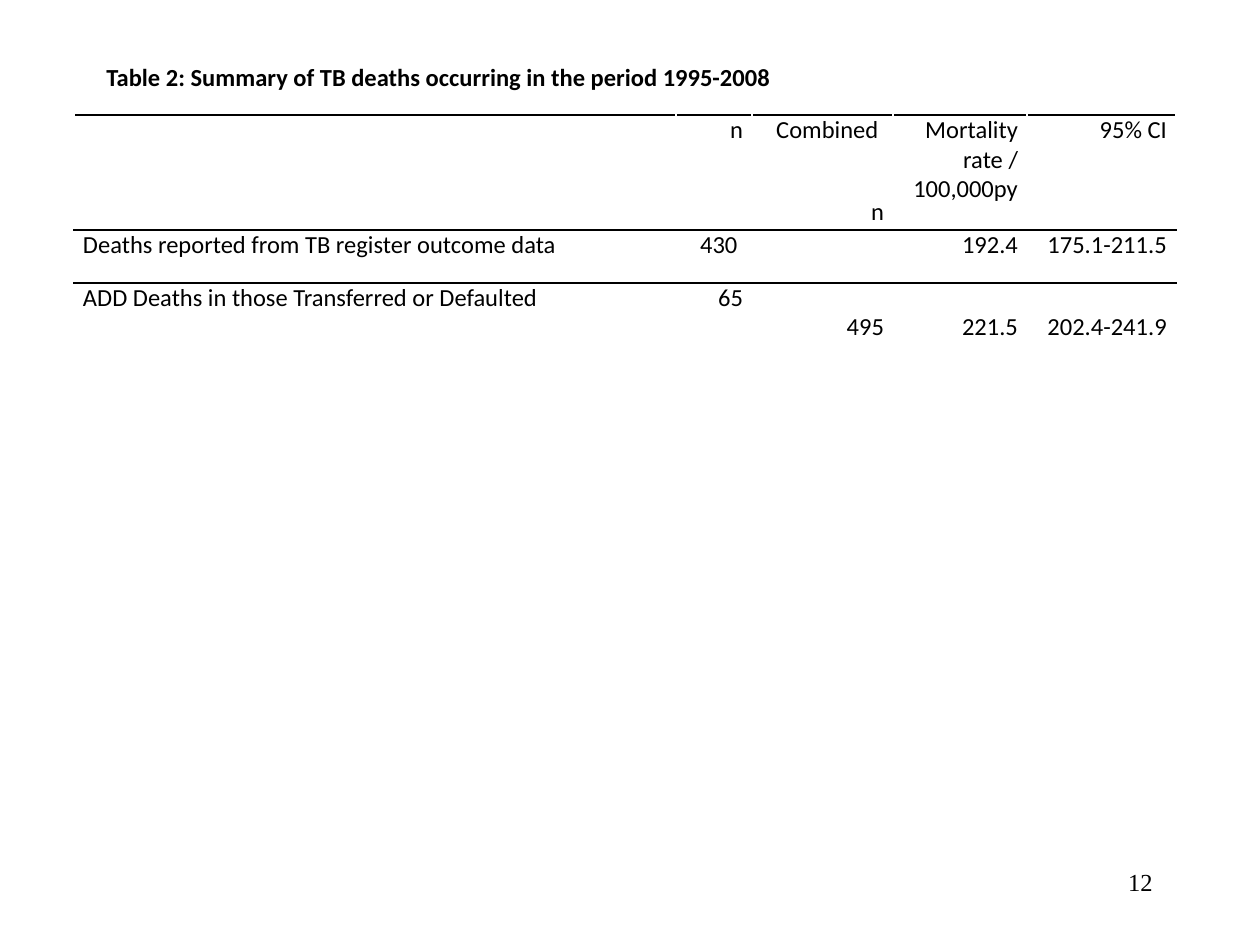
from lxml import etree
from pptx import Presentation
from pptx.dml.color import RGBColor
from pptx.enum.text import PP_ALIGN
from pptx.oxml.ns import qn
from pptx.util import Emu, Pt

LEFT, RIGHT, JUSTIFY = PP_ALIGN.LEFT, PP_ALIGN.RIGHT, PP_ALIGN.JUSTIFY
PX = 914400 / 126
BLACK = "000000"
TEXT_SIZE = 14
RULE_WIDTH = 1.5

TITLE = "Table 2: Summary of TB deaths occurring in the period 1995-2008"
PAGE_NUMBER = "12"
ROWS = [
    ["", "n", "Combined \nn", "Mortality rate / 100,000py", "95% CI"],
    ["Deaths reported from TB register outcome data", "430 ", "", "192.4", "175.1-211.5"],
    ["ADD Deaths in those Transferred or Defaulted", "65", "", "", ""],
    ["", "", "495", "221.5", "202.4-241.9"],
]
COLUMN_WIDTHS = [602, 76, 141, 134, 149]
ROW_HEIGHTS = [115, 53, 27, 27]
RULED_EDGES = {0: ["lnT", "lnB"], 1: ["lnT"]}  # row: edges with a line


def px(length):
    return Emu(round(length * PX))


def color(hex_text):
    return RGBColor.from_string(hex_text)


def write(frame, text, font="Calibri", bold=False, align=LEFT, before=0, after=0):
    frame.word_wrap = True
    for index, line in enumerate(text.split("\n")):
        paragraph = frame.add_paragraph() if index else frame.paragraphs[0]
        paragraph.alignment = align
        paragraph.space_before, paragraph.space_after = Pt(before), Pt(after)
        if not line:
            # An empty cell would otherwise stretch its row at the default size.
            etree.SubElement(paragraph._p, qn("a:endParaRPr"), sz=str(TEXT_SIZE * 100))
            continue
        run = paragraph.add_run()
        run.text = line
        run.font.name, run.font.size, run.font.bold = font, Pt(TEXT_SIZE), bold
        run.font.color.rgb = color(BLACK)


def add_text(slide, box, text, **style):
    write(slide.shapes.add_textbox(*map(px, box)).text_frame, text, **style)


def rule_edge(cell, edge):
    line = etree.SubElement(cell._tc.get_or_add_tcPr(), qn(f"a:{edge}"),
                            w=str(Pt(RULE_WIDTH)))
    fill = etree.SubElement(line, qn("a:solidFill"))
    etree.SubElement(fill, qn("a:srgbClr"), val=BLACK)


def add_deaths_table(slide, left, top):
    table = slide.shapes.add_table(
        len(ROWS), len(COLUMN_WIDTHS), px(left), px(top),
        px(sum(COLUMN_WIDTHS)), px(sum(ROW_HEIGHTS))).table
    table.first_row = table.horz_banding = False
    for column, width in zip(table.columns, COLUMN_WIDTHS):
        column.width = px(width)
    for r, texts in enumerate(ROWS):
        table.rows[r].height = px(ROW_HEIGHTS[r])
        for c, text in enumerate(texts):
            cell = table.cell(r, c)
            cell.margin_left = cell.margin_right = px(9)
            cell.margin_top = cell.margin_bottom = 0
            write(cell.text_frame, text, align=RIGHT if c else JUSTIFY,
                  before=24, after=6)
            for edge in RULED_EDGES.get(r, []):
                rule_edge(cell, edge)
            cell.fill.background()


def main():
    deck = Presentation()
    deck.slide_width, deck.slide_height = px(1260), px(945)
    slide = deck.slides.add_slide(deck.slide_layouts[6])
    add_text(slide, (903, 861, 262, 63), PAGE_NUMBER,
             font="Times New Roman", align=RIGHT)
    add_deaths_table(slide, 74, 115)
    add_text(slide, (94, 56, 1062, 43), TITLE, bold=True)
    deck.save("out.pptx")


if __name__ == "__main__":
    main()
